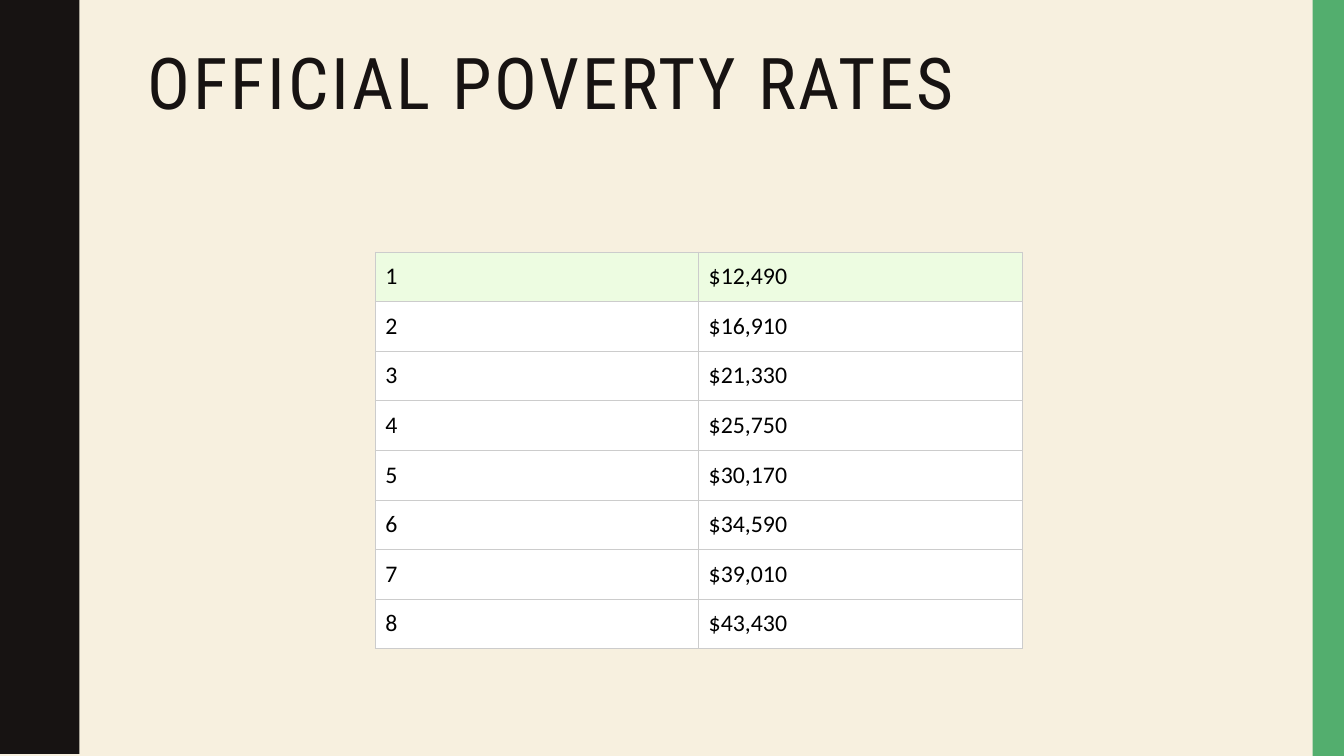
from dataclasses import dataclass

from lxml import etree
from pptx import Presentation
from pptx import util as u
from pptx.dml.color import RGBColor
from pptx.enum import shapes, text
from pptx.oxml import ns

CREAM = RGBColor(0xF7, 0xF0, 0xDF)
INK = RGBColor(0x17, 0x13, 0x12)
GREEN = RGBColor(0x53, 0xAE, 0x6E)
PALE_GREEN = RGBColor(0xED, 0xFC, 0xE1)
WHITE = RGBColor(0xFF, 0xFF, 0xFF)
BLACK = RGBColor(0x00, 0x00, 0x00)
GREY = RGBColor(0xCC, 0xCC, 0xCC)

PAGE_WIDTH, PAGE_HEIGHT = u.Cm(33.87), u.Cm(19.05)

# Wavy edge in centimetres: one crest per period, given by its first quarter
WAVE_COUNT = 5
WAVE_PERIOD = 3.81
WAVE_LEFT, WAVE_RIGHT = 1.98, 2.47
QUARTER_WAVE = [(1.98, 0), (1.99, 0.18), (2.01, 0.36), (2.03, 0.51),
                (2.07, 0.64), (2.11, 0.75), (2.16, 0.85)]


@dataclass(frozen=True)
class PovertyRate:
    household: str
    income: str
    fill: RGBColor = WHITE


RATES = [
    PovertyRate("1", "$12,490", PALE_GREEN),
    PovertyRate("2", "$16,910"),
    PovertyRate("3", "$21,330"),
    PovertyRate("4", "$25,750"),
    PovertyRate("5", "$30,170"),
    PovertyRate("6", "$34,590"),
    PovertyRate("7", "$39,010"),
    PovertyRate("8", "$43,430"),
]

TITLE_FORMAT = {"name": "Roboto Condensed", "size": u.Pt(51), "bold": False}
CELL_FORMAT = {"name": "Calibri", "size": u.Pt(17), "bold": False}
CELL_MARGINS = {f"margin_{side}": u.Cm(0.25)
                for side in ("left", "right", "top", "bottom")}


def set_attributes(target, values: dict) -> None:
    for name, value in values.items():
        setattr(target, name, value)


def add_span(para, words: str, values: dict, color: RGBColor):
    span = para.add_run()
    span.text = words
    set_attributes(span.font, values)
    span.font.color.rgb = color
    return span


def paint(shape, color: RGBColor) -> None:
    shape.shadow.inherit = False
    shape.fill.solid()
    shape.fill.fore_color.rgb = color
    shape.line.fill.background()


def wave_points() -> list[tuple[float, float]]:
    half = WAVE_PERIOD / 2
    mirrored = [(WAVE_LEFT + WAVE_RIGHT - x, half - y)
                for x, y in reversed(QUARTER_WAVE)]
    rising = QUARTER_WAVE + mirrored
    falling = [(x, WAVE_PERIOD - y) for x, y in reversed(rising[1:-1])]
    points = [(x, y + wave * WAVE_PERIOD)
              for wave in range(WAVE_COUNT) for x, y in rising + falling]
    return points + [(WAVE_LEFT, WAVE_COUNT * WAVE_PERIOD)]


def add_side_bands(page) -> None:
    builder = page.shapes.build_freeform(0, 0, scale=u.Cm(1))
    builder.add_line_segments(
        wave_points() + [(0, WAVE_COUNT * WAVE_PERIOD)], close=True)
    paint(builder.convert_to_shape(), INK)

    width = u.Cm(0.79)
    band = page.shapes.add_shape(shapes.MSO_SHAPE.RECTANGLE,
                                 PAGE_WIDTH - width, 0, width, PAGE_HEIGHT)
    paint(band, GREEN)


def add_title(page) -> None:
    box = page.shapes.add_textbox(u.Cm(3.48), u.Cm(1.07),
                                  u.Cm(28.27), u.Cm(4.14))
    set_attributes(box.text_frame, {"word_wrap": True,
                                    "vertical_anchor": text.MSO_ANCHOR.TOP})
    para = box.text_frame.paragraphs[0]
    para.line_spacing = 0.9
    span = add_span(para, "OFFICIAL POVERTY RATES", TITLE_FORMAT, INK)
    span.font._element.set("spc", "200")


def add_borders(cell) -> None:
    properties = cell._tc.get_or_add_tcPr()
    for side in ("lnL", "lnR", "lnT", "lnB"):
        line = etree.SubElement(properties, ns.qn(f"a:{side}"),
                                w=str(u.Pt(0.75)))
        fill = etree.SubElement(line, ns.qn("a:solidFill"))
        etree.SubElement(fill, ns.qn("a:srgbClr"), val=str(GREY))


def fill_cell(cell, words: str, color: RGBColor) -> None:
    set_attributes(cell, CELL_MARGINS)
    add_borders(cell)
    cell.fill.solid()
    cell.fill.fore_color.rgb = color
    add_span(cell.text_frame.paragraphs[0], words, CELL_FORMAT, BLACK)


def add_rate_table(page) -> None:
    table = page.shapes.add_table(len(RATES), 2, u.Cm(9.46), u.Cm(6.35),
                                  u.Cm(16.3), u.Cm(1.25) * len(RATES)).table
    set_attributes(table, {"first_row": False, "horz_banding": False})
    for row, rate in enumerate(RATES):
        for column, words in enumerate((rate.household, rate.income)):
            fill_cell(table.cell(row, column), words, rate.fill)


def main() -> None:
    deck = Presentation()
    deck.slide_width, deck.slide_height = PAGE_WIDTH, PAGE_HEIGHT
    page = deck.slides.add_slide(deck.slide_layouts[6])

    # Background and side bands
    page.background.fill.solid()
    page.background.fill.fore_color.rgb = CREAM
    add_side_bands(page)

    # Title and table
    add_title(page)
    add_rate_table(page)

    deck.save("out.pptx")


if __name__ == "__main__":
    main()
